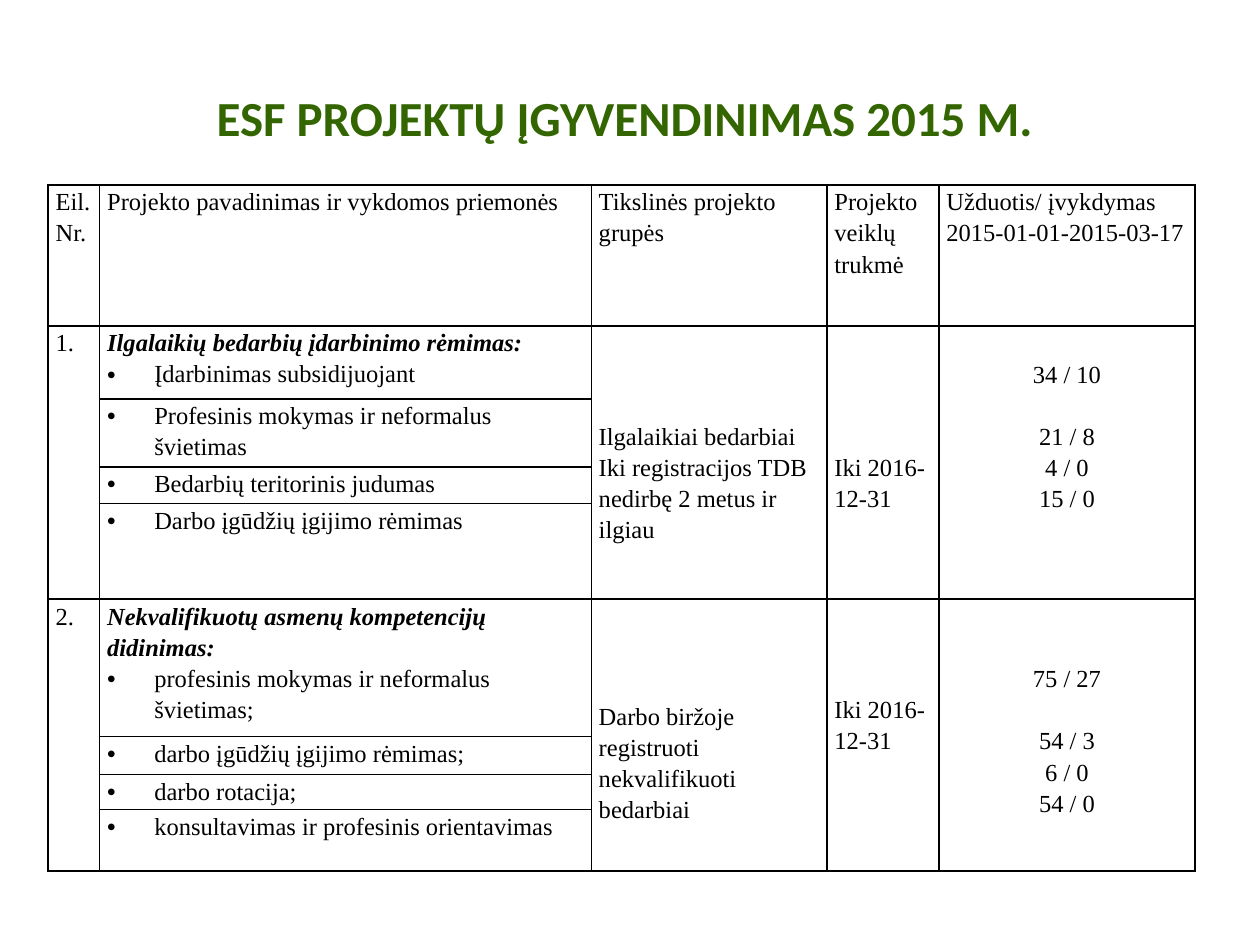
"""Build the slide on ESF project implementation in 2015."""
import pptx
import pptx.dml.color
import pptx.enum.text
import pptx.oxml
import pptx.oxml.ns
import pptx.util
from lxml import etree

Cm, Pt = pptx.util.Cm, pptx.util.Pt
ALIGN = pptx.enum.text.PP_ALIGN
qn = pptx.oxml.ns.qn
GREEN = pptx.dml.color.RGBColor(0x33, 0x66, 0x00)
BLACK = pptx.dml.color.RGBColor(0, 0, 0)

TITLE = "ESF PROJEKTŲ ĮGYVENDINIMAS 2015 M."
HEADERS = [
    ["Eil. Nr."],
    ["Projekto pavadinimas ir vykdomos priemonės"],
    ["Tikslinės projekto grupės"],
    ["Projekto veiklų trukmė"],
    ["Užduotis/ įvykdymas", "2015-01-01-2015-03-17"],
]
PROJECTS = [
    {
        "number": "1.",
        "name": "Ilgalaikių bedarbių įdarbinimo rėmimas:",
        "measures": ["Įdarbinimas subsidijuojant",
                     "Profesinis mokymas ir neformalus švietimas",
                     "Bedarbių teritorinis judumas",
                     "Darbo įgūdžių įgijimo rėmimas"],
        "groups": ["Ilgalaikiai bedarbiai",
                   "Iki registracijos TDB nedirbę 2 metus ir ilgiau"],
        "term": "Iki 2016-12-31",
        "results": ["34 / 10", "21 / 8", "4 / 0", "15 / 0"],
        "lines_above": (3, 4, 1),
    },
    {
        "number": "2.",
        "name": "Nekvalifikuotų asmenų kompetencijų didinimas:",
        "measures": ["profesinis mokymas ir neformalus švietimas;",
                     "darbo įgūdžių įgijimo rėmimas;",
                     "darbo rotacija;",
                     "konsultavimas ir profesinis orientavimas"],
        "groups": ["Darbo biržoje registruoti nekvalifikuoti bedarbiai"],
        "term": "Iki 2016-12-31",
        "results": ["75 / 27", "54 / 3", "6 / 0", "54 / 0"],
        "lines_above": (3.2, 3, 2),
    },
]
COLUMNS = [1.04, 9.91, 4.75, 2.26, 5.16]
ROWS = [2.84, 1.47, 1.37, 0.74, 1.93, 2.77, 0.76, 0.71, 1.24]
LINE = 0.63


def style_cell(cell):
    """Give a cell no fill, narrow margins and black borders."""
    cell.fill.background()
    cell.margin_left = cell.margin_right = Cm(0.15)
    cell.margin_top = cell.margin_bottom = 0
    tcPr = cell._tc.get_or_add_tcPr()
    for i, side in enumerate(("lnL", "lnR", "lnT", "lnB")):
        ln = etree.Element(qn(f"a:{side}"), w=str(Pt(1)))
        fill = etree.SubElement(ln, qn("a:solidFill"))
        etree.SubElement(fill, qn("a:srgbClr"), val=str(BLACK))
        tcPr.insert(i, ln)


def add_bullet(p):
    """Give a paragraph a hanging round bullet."""
    pPr = p._p.get_or_add_pPr()
    pPr.set("marL", str(Cm(0.95)))
    pPr.set("indent", str(-Cm(0.95)))
    etree.SubElement(pPr, qn("a:buFont"), typeface="Arial")
    etree.SubElement(pPr, qn("a:buChar"), char="•")


def fill_cell(cell, lines, lines_above=0, align=ALIGN.LEFT):
    """Write lines in a cell below a number of free lines."""
    cell.margin_top = Cm(LINE * lines_above)
    tf = cell.text_frame
    tf.text = "\n".join(lines)
    for p in tf.paragraphs:
        p.alignment = align
        p.line_spacing = 1.15
        for r in p.runs:
            r.font.name = "Times New Roman"
            r.font.size = Pt(14)
            r.font.color.rgb = BLACK
    return tf.paragraphs


def fill_project(table, top, project):
    """Write a project in its block of rows."""
    measures = project["measures"]
    for col in (0, 2, 3, 4):
        table.cell(top, col).merge(table.cell(top + len(measures) - 1, col))
    fill_cell(table.cell(top, 0), [project["number"]])
    for i, measure in enumerate(measures):
        heading = [project["name"]] if i == 0 else []
        paragraphs = fill_cell(table.cell(top + i, 1), heading + [measure])
        add_bullet(paragraphs[-1])
        if heading:
            font = paragraphs[0].runs[0].font
            font.bold = font.italic = True
    group_gap, term_gap, result_gap = project["lines_above"]
    fill_cell(table.cell(top, 2), project["groups"], group_gap)
    fill_cell(table.cell(top, 3), [project["term"]], term_gap)
    results = fill_cell(table.cell(top, 4), project["results"], result_gap, ALIGN.CENTER)
    results[1].space_before = Cm(LINE)


def main():
    """Build and save the slide."""
    prs = pptx.Presentation()
    prs.slide_width, prs.slide_height = Cm(25.4), Cm(19.05)
    s = prs.slides.add_slide(prs.slide_layouts[6])

    tf = s.shapes.add_textbox(Cm(1.16), Cm(0.76), Cm(22.86), Cm(3.18)).text_frame
    tf.word_wrap = True
    tf.vertical_anchor = pptx.enum.text.MSO_ANCHOR.MIDDLE
    tf.text = TITLE
    p = tf.paragraphs[0]
    p.alignment = ALIGN.CENTER
    font = p.runs[0].font
    font.name, font.size, font.bold = "Calibri", Pt(28), True
    font.color.rgb = GREEN

    table = s.shapes.add_table(len(ROWS), len(COLUMNS), Cm(0.97), Cm(3.73),
                               Cm(sum(COLUMNS)), Cm(sum(ROWS))).table
    table.first_row = table.horz_banding = False
    for column, width in zip(table.columns, COLUMNS):
        column.width = Cm(width)
    for row, height in zip(table.rows, ROWS):
        row.height = Cm(height)
    for cell in table.iter_cells():
        style_cell(cell)
    for col, lines in enumerate(HEADERS):
        fill_cell(table.cell(0, col), lines)
    top = 1
    for project in PROJECTS:
        fill_project(table, top, project)
        top += len(project["measures"])
    prs.save("out.pptx")


if __name__ == "__main__":
    main()
